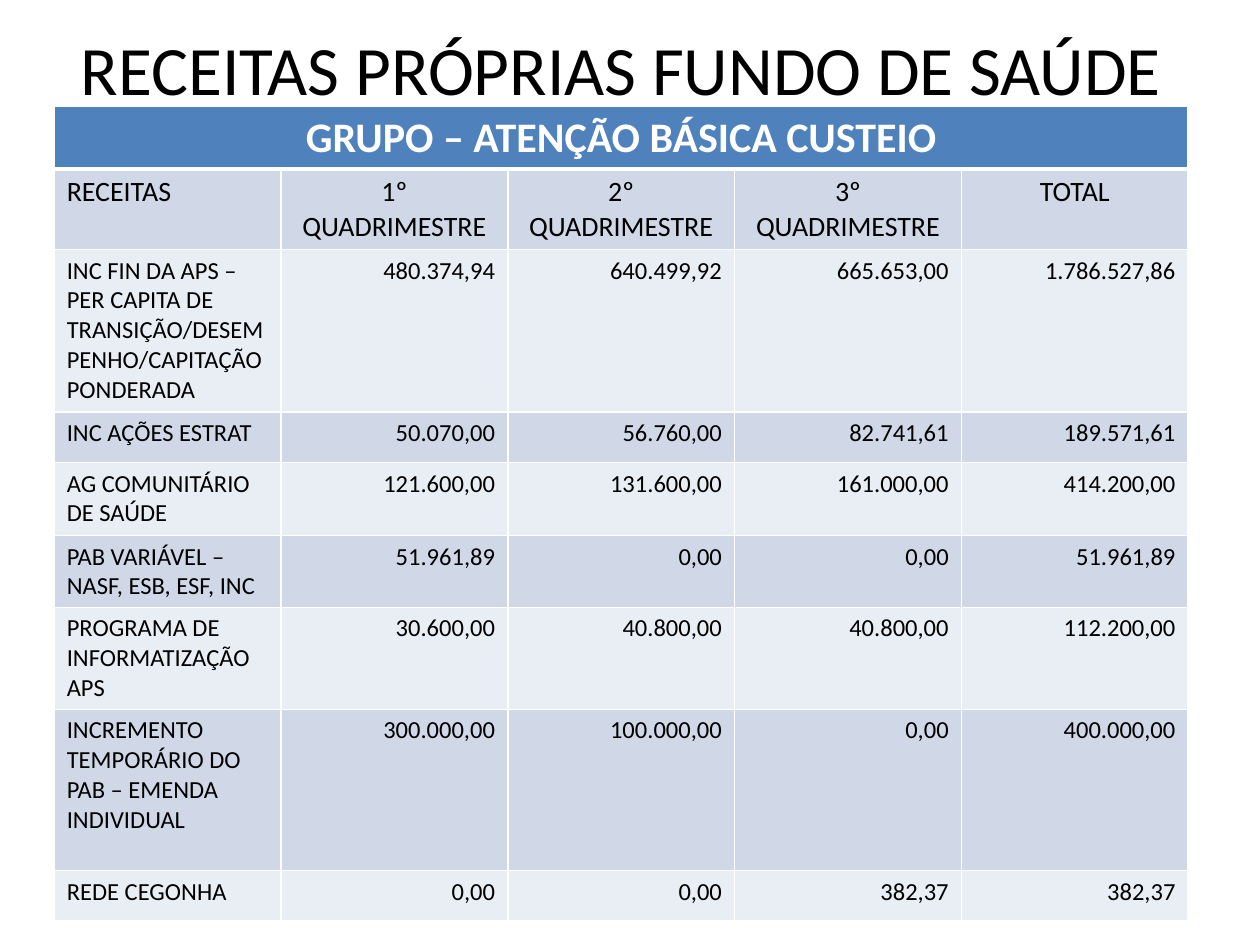
import pptx
import pptx.util
import pptx.dml.color
import pptx.enum.text
import pptx.oxml
import pptx.oxml.ns

Inches = pptx.util.Inches
Pt = pptx.util.Pt
Align = pptx.enum.text.PP_ALIGN
Anchor = pptx.enum.text.MSO_ANCHOR


def color(code):
    return pptx.dml.color.RGBColor.from_string(code)


def write(frame, text, size, align, code="000000", bold=False):
    para = frame.paragraphs[0]
    para.alignment = align
    run = para.add_run()
    run.text = text
    run.font.name = "Calibri"
    run.font.size = Pt(size)
    run.font.bold = bold
    run.font.color.rgb = color(code)


deck = pptx.Presentation()
deck.slide_width = Inches(10)
deck.slide_height = Inches(7.5)
slide = deck.slides.add_slide(deck.slide_layouts[6])

title = slide.shapes.add_textbox(Inches(0.43), Inches(0.13), Inches(9), Inches(1.5))
frame = title.text_frame
frame.word_wrap = True
frame.vertical_anchor = Anchor.TOP
frame.margin_top = Inches(0.08)
write(frame, "RECEITAS PRÓPRIAS FUNDO DE SAÚDE", 39.6, Align.CENTER)

rows = [
    ["GRUPO – ATENÇÃO BÁSICA CUSTEIO", "", "", "", ""],
    ["RECEITAS", "1º QUADRIMESTRE", "2º QUADRIMESTRE", "3º QUADRIMESTRE", "TOTAL"],
    ["INC FIN DA APS – PER CAPITA DE TRANSIÇÃO/DESEMPENHO/CAPITAÇÃO PONDERADA",
     "480.374,94", "640.499,92", "665.653,00", "1.786.527,86"],
    ["INC AÇÕES ESTRAT", "50.070,00", "56.760,00", "82.741,61", "189.571,61"],
    ["AG COMUNITÁRIO DE SAÚDE", "121.600,00", "131.600,00", "161.000,00", "414.200,00"],
    ["PAB VARIÁVEL – NASF, ESB, ESF, INC", "51.961,89", "0,00", "0,00", "51.961,89"],
    ["PROGRAMA DE INFORMATIZAÇÃO APS", "30.600,00", "40.800,00", "40.800,00", "112.200,00"],
    ["INCREMENTO TEMPORÁRIO DO PAB – EMENDA INDIVIDUAL",
     "300.000,00", "100.000,00", "0,00", "400.000,00"],
    ["REDE CEGONHA", "0,00", "0,00", "382,37", "382,37"],
]
highs = [0.5, 0.64, 1.29, 0.4, 0.58, 0.57, 0.81, 1.28, 0.4]

table = slide.shapes.add_table(
    len(rows), 5, Inches(0.43), Inches(0.84), Inches(9), Inches(sum(highs))).table
for col in table.columns:
    col.width = Inches(1.8)
table.cell(0, 0).merge(table.cell(0, 4))

for r, (row, high) in enumerate(zip(rows, highs)):
    table.rows[r].height = Inches(high)
    fill = "4F81BD" if r == 0 else ("E9EDF4", "D0D8E8")[r % 2]
    for c, text in enumerate(row):
        cell = table.cell(r, c)
        cell.fill.solid()
        cell.fill.fore_color.rgb = color(fill)
        if r == 0 and c == 0:
            write(cell.text_frame, text, 24, Align.CENTER, "FFFFFF", True)
        elif r > 0:
            side = Align.LEFT if c == 0 else Align.CENTER if r == 1 else Align.RIGHT
            write(cell.text_frame, text, 16 if r == 1 else 14, side)
        props = cell._tc.get_or_add_tcPr()
        for i, edge in enumerate(("lnL", "lnR", "lnT", "lnB")):
            thick = (r, edge) in ((0, "lnB"), (1, "lnT"))
            props.insert(i, pptx.oxml.parse_xml(
                f'<a:{edge} {pptx.oxml.ns.nsdecls("a")} w="{Pt(3 if thick else 1)}">'
                f'<a:solidFill><a:srgbClr val="FFFFFF"/></a:solidFill></a:{edge}>'))

deck.save("out.pptx")
